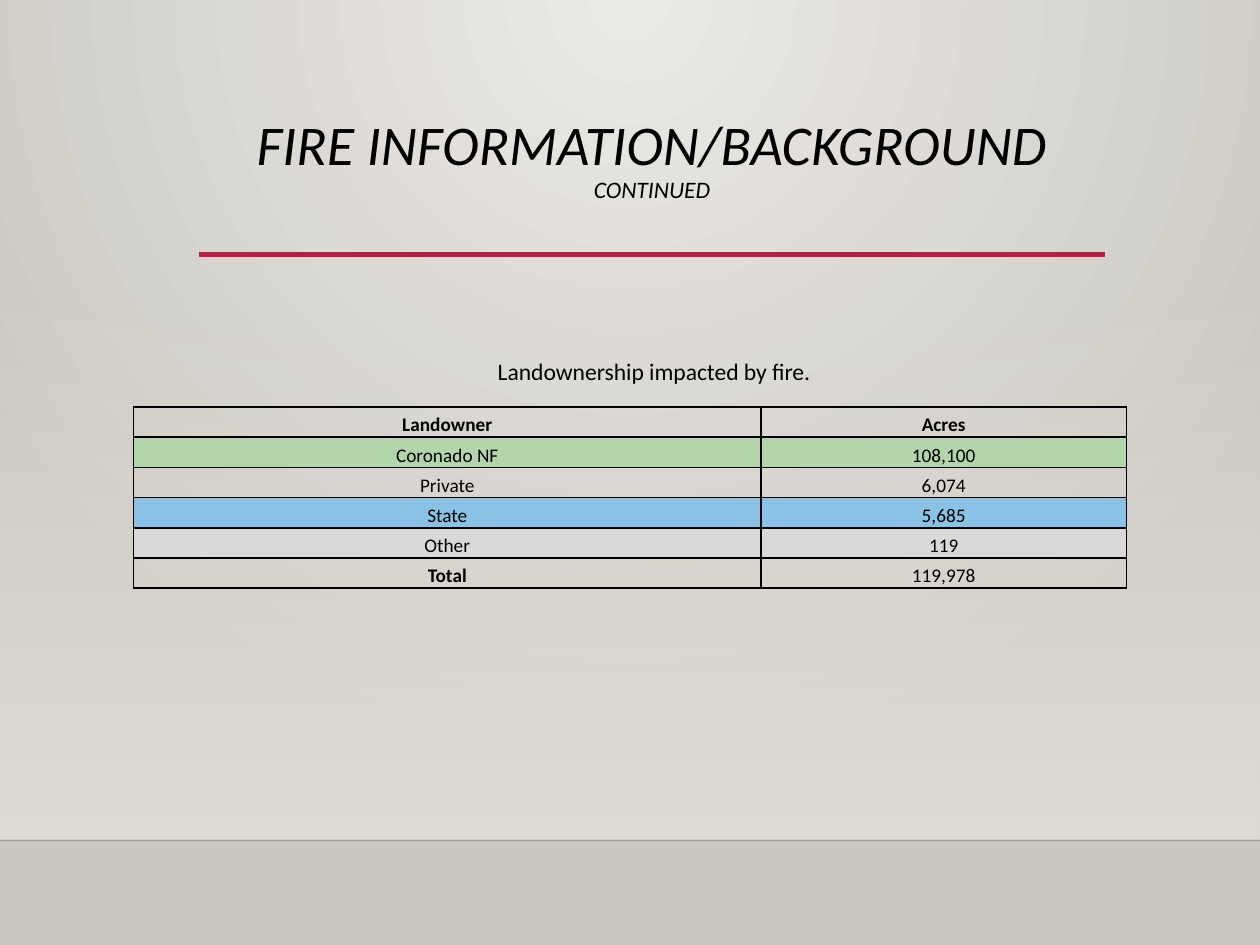
from lxml import etree
from pptx import Presentation
from pptx.dml.color import RGBColor
from pptx.enum.shapes import MSO_CONNECTOR, MSO_SHAPE
from pptx.enum.text import MSO_ANCHOR, PP_ALIGN
from pptx.oxml import parse_xml
from pptx.oxml.ns import nsdecls, qn
from pptx.util import Inches, Pt

CENTER = PP_ALIGN.CENTER
TOP, BOTTOM = MSO_ANCHOR.TOP, MSO_ANCHOR.BOTTOM
STRAIGHT, RECTANGLE = MSO_CONNECTOR.STRAIGHT, MSO_SHAPE.RECTANGLE

THEME = {
    "font": "Calibri",
    "text": "000000",
    "accent": "B71E42",
    "glow": "ECEAE7",
    "floor": "CAC7C1",
    "wall": "DFDBD5",
    "forest": "B3D5AB",
    "state": "89C2E5",
    "other": "D9D9D9",
    "title_size": 32,
    "small_size": 13.5,
    "table_size": 11,
}


def gradient(start, start_alpha, end, direction):
    return parse_xml(
        f'<a:gradFill {nsdecls("a")} rotWithShape="1"><a:gsLst>'
        f'<a:gs pos="0"><a:srgbClr val="{start}"><a:alpha val="{start_alpha}"/></a:srgbClr></a:gs>'
        f'<a:gs pos="100000"><a:srgbClr val="{end}"/></a:gs>'
        f"</a:gsLst>{direction}</a:gradFill>"
    )


def style_font(font, size, bold=False, italic=False):
    font.name = THEME["font"]
    font.size = Pt(size)
    font.bold = bold
    font.italic = italic
    font.color.rgb = RGBColor.from_string(THEME["text"])


prs = Presentation()
prs.slide_width, prs.slide_height = Inches(10), Inches(7.5)
slide = prs.slides.add_slide(prs.slide_layouts[5])
shapes = slide.shapes

slide.background.fill.solid()
background = slide.element.find(".//" + qn("p:bgPr"))
radial = '<a:path path="circle"><a:fillToRect l="43000" t="0" r="43000" b="100000"/></a:path>'
background.replace(background[0], gradient(THEME["glow"], 100000, THEME["floor"], radial))

wall = shapes.add_shape(RECTANGLE, Inches(0), Inches(2.2), Inches(10), Inches(4.46))
wall.shadow.inherit = False
wall.line.fill.background()
wall.fill.solid()
wall_properties = wall.element.spPr
wall_properties.replace(
    wall_properties.find(qn("a:solidFill")),
    gradient(THEME["wall"], 0, THEME["wall"], '<a:lin ang="5400000" scaled="0"/>'),
)

for left, right, y, color, width, alpha in (
    (0, 10, 6.67, THEME["text"], 1, 20000),
    (1.58, 8.77, 2.02, THEME["accent"], 2.5, 100000),
):
    rule = shapes.add_connector(STRAIGHT, Inches(left), Inches(y), Inches(right), Inches(y))
    rule.line.color.rgb = RGBColor.from_string(color)
    rule.line.width = Pt(width)
    rule_properties = rule.element.spPr
    rule_color = rule_properties.find(".//" + qn("a:srgbClr"))
    etree.SubElement(rule_color, qn("a:alpha")).set("val", str(alpha))
    etree.SubElement(rule_properties, qn("a:effectLst"))

title = shapes.title
title.left, title.top = Inches(1.58), Inches(0.88)
title.width, title.height = Inches(7.19), Inches(1.15)
title.text_frame.text = "FIRE INFORMATION/BACKGROUND\vCONTINUED"
title.text_frame.vertical_anchor = TOP
heading = title.text_frame.paragraphs[0]
heading.alignment = CENTER
heading.line_spacing = 0.9
for run, size in zip(heading.runs, (THEME["title_size"], THEME["small_size"])):
    style_font(run.font, size, italic=True)

landowners = (
    ("Landowner", "Acres", None),
    ("Coronado NF", "108,100", THEME["forest"]),
    ("Private", "6,074", None),
    ("State", "5,685", THEME["state"]),
    ("Other", "119", THEME["other"]),
    ("Total", "119,978", None),
)
bold_cells = {(0, 0), (0, 1), (5, 0)}
acreage = shapes.add_table(
    len(landowners), 2, Inches(1.06), Inches(3.23), Inches(7.88), Inches(1.42)
).table
acreage.first_row = acreage.horz_banding = False
for column, width in zip(acreage.columns, (4.98, 2.9)):
    column.width = Inches(width)

for row, (owner, acres, color) in enumerate(landowners):
    acreage.rows[row].height = Inches(0.24)
    for col, text in enumerate((owner, acres)):
        cell = acreage.cell(row, col)
        cell.margin_left = cell.margin_right = Inches(0.06)
        cell.margin_top = cell.margin_bottom = Inches(0)
        cell.vertical_anchor = BOTTOM
        cell.text_frame.text = text
        entry = cell.text_frame.paragraphs[0]
        entry.alignment = CENTER
        entry.line_spacing = 1.15
        style_font(entry.runs[0].font, THEME["table_size"], bold=(row, col) in bold_cells)
        if color:
            cell.fill.solid()
            cell.fill.fore_color.rgb = RGBColor.from_string(color)
        else:
            cell.fill.background()
        for index, side in enumerate(("lnL", "lnR", "lnT", "lnB")):
            border = parse_xml(
                f'<a:{side} {nsdecls("a")} w="12700"><a:solidFill>'
                f'<a:srgbClr val="{THEME["text"]}"/></a:solidFill></a:{side}>'
            )
            cell._tc.get_or_add_tcPr().insert(index, border)

caption = shapes.add_textbox(Inches(1.85), Inches(2.78), Inches(6.68), Inches(0.33))
caption.text_frame.word_wrap = True
caption.text_frame.text = "Landownership impacted by fire."
caption_line = caption.text_frame.paragraphs[0]
caption_line.alignment = CENTER
style_font(caption_line.runs[0].font, THEME["small_size"])

prs.save("out.pptx")
